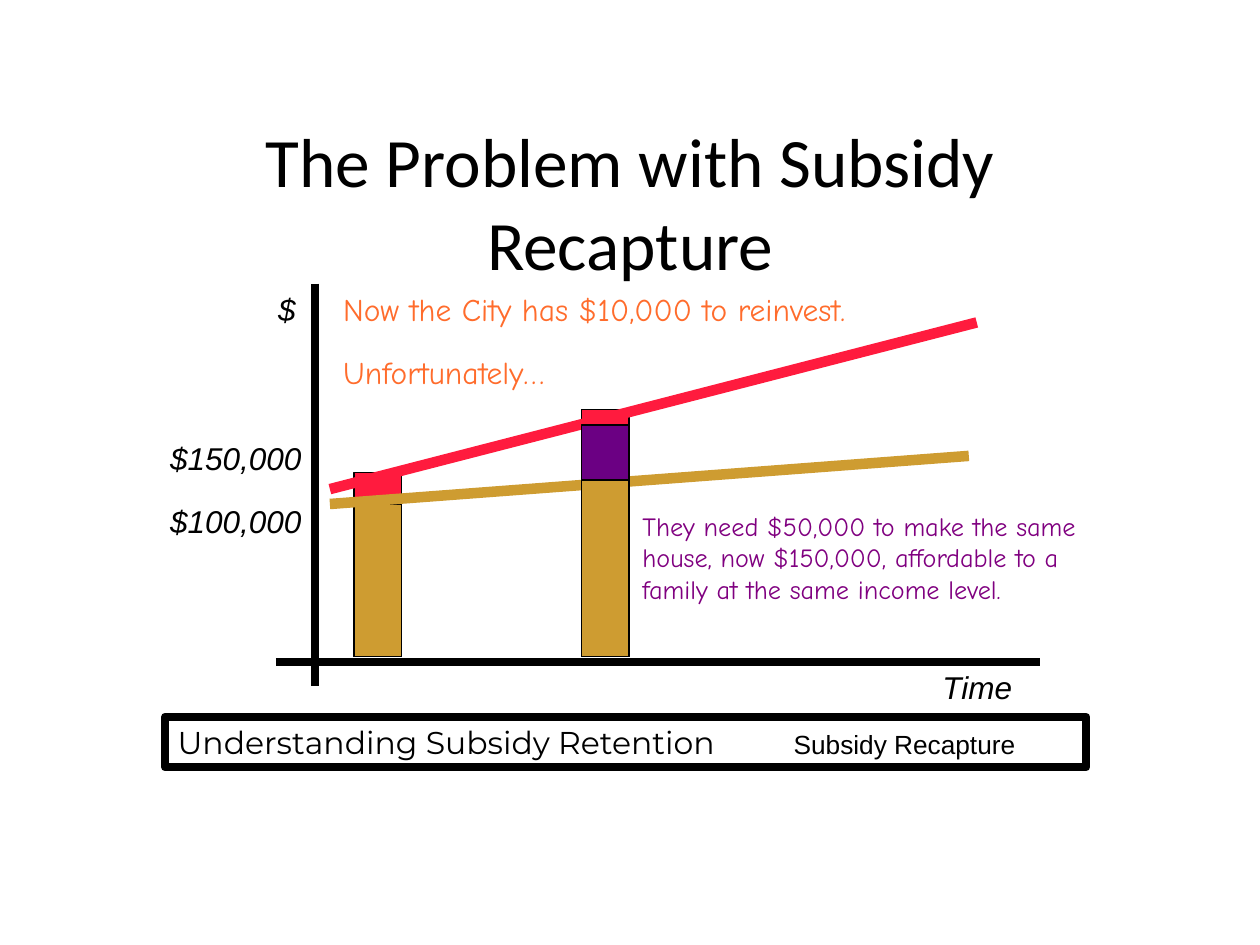
from dataclasses import dataclass

from lxml.etree import SubElement
from pptx import Presentation
from pptx.dml.color import RGBColor
from pptx.enum.shapes import MSO_CONNECTOR as Connector, MSO_SHAPE as ShapeKind
from pptx.enum.text import MSO_ANCHOR as Anchor, MSO_AUTO_SIZE as AutoSize, PP_ALIGN as Align
from pptx.oxml.ns import qn
from pptx.util import Cm, Pt

COLORS = {
    "ink": "000000",
    "market": "FF1B3E",
    "affordable": "CE9C31",
    "gap": "6B0083",
    "city": "FF6C2C",
    "need": "800080",
}
TITLE_LAYOUT = 5
BAR_WIDTH = 0.95
BAR_BASE = 13.24


@dataclass(frozen=True)
class Line:
    start: tuple[float, float]
    end: tuple[float, float]
    color: str
    weight: float


@dataclass(frozen=True)
class Segment:
    left: float
    top: float
    bottom: float
    color: str


@dataclass(frozen=True)
class Label:
    text: str
    left: float
    top: float
    width: float
    height: float = 1.02
    font: str = "Arial"
    size: float = 18
    color: str = "ink"
    italic: bool = False
    wrap: bool = False


AXES = [
    Line((6.35, 5.72), (6.35, 13.82), "ink", 4.5),
    Line((5.56, 13.34), (20.96, 13.34), "ink", 4.5),
]
TRENDS = [
    Line((6.65, 10.16), (19.53, 9.19), "affordable", 6),
    Line((6.65, 9.86), (19.69, 6.5), "market", 6),
]
BACK_SEGMENTS = [
    Segment(7.14, 9.53, BAR_BASE, "market"),
    Segment(7.14, 10.16, BAR_BASE, "affordable"),
    Segment(11.73, 8.26, BAR_BASE, "market"),
]
FRONT_SEGMENTS = [
    Segment(11.73, 9.68, BAR_BASE, "affordable"),
    Segment(11.73, 8.57, 9.68, "gap"),
]
LABELS = [
    Label("$", 5.38, 5.72, 0.48, italic=True),
    Label("$150,000", 3.18, 8.73, 3.18, italic=True),
    Label("$100,000", 3.18, 10, 3.18, italic=True),
    Label("Time", 18.75, 13.34, 2.69, italic=True),
    Label("Now the City has $10,000 to reinvest.", 6.67, 5.72, 11.91,
          font="Comic Neue", color="city"),
    Label("Unfortunately…", 6.67, 6.99, 5.18, font="Comic Neue", color="city"),
    Label("They need $50,000 to make the same house, now $150,000, "
          "affordable to a family at the same income level.",
          12.7, 10.16, 10.01, 2.18, "Comic Neue", 15, "need", wrap=True),
]


def rgb(color: str) -> RGBColor:
    return RGBColor.from_string(COLORS[color])


def add_run(paragraph, text: str, font: str, size: float,
            color: str = "ink", italic: bool = False) -> None:
    run = paragraph.add_run()
    run.text = text
    run.font.name = font
    run.font.size = Pt(size)
    run.font.italic = italic
    run.font.color.rgb = rgb(color)


def draw_line(slide, line: Line) -> None:
    points = [Cm(value) for value in (*line.start, *line.end)]
    connector = slide.shapes.add_connector(Connector.STRAIGHT, *points)
    connector.line.color.rgb = rgb(line.color)
    connector.line.width = Pt(line.weight)
    SubElement(connector._element.spPr, qn("a:effectLst"))


def draw_rectangle(slide, left: float, top: float, width: float, height: float,
                   weight: float):
    shape = slide.shapes.add_shape(
        ShapeKind.RECTANGLE, Cm(left), Cm(top), Cm(width), Cm(height))
    shape.shadow.inherit = False
    shape.line.color.rgb = rgb("ink")
    shape.line.width = Pt(weight)
    return shape


def draw_segment(slide, segment: Segment) -> None:
    shape = draw_rectangle(slide, segment.left, segment.top, BAR_WIDTH,
                           segment.bottom - segment.top, 0.75)
    shape.fill.solid()
    shape.fill.fore_color.rgb = rgb(segment.color)


def draw_label(slide, label: Label) -> None:
    box = slide.shapes.add_textbox(
        Cm(label.left), Cm(label.top), Cm(label.width), Cm(label.height))
    frame = box.text_frame
    frame.word_wrap = label.wrap
    add_run(frame.paragraphs[0], label.text, label.font, label.size,
            label.color, label.italic)


def draw_title(slide) -> None:
    title = slide.shapes.title
    title.left, title.top, title.width, title.height = (
        Cm(4.13), Cm(2.86), Cm(17.15), Cm(2.38))
    frame = title.text_frame
    frame.auto_size = AutoSize.NONE
    frame.vertical_anchor = Anchor.MIDDLE
    paragraph = frame.paragraphs[0]
    paragraph.alignment = Align.CENTER
    add_run(paragraph, "The Problem with Subsidy Recapture", "Calibri", 39.6)


def draw_footer(slide) -> None:
    footer = draw_rectangle(slide, 3.33, 14.45, 18.57, 1.02, 4.5)
    footer.fill.background()
    frame = footer.text_frame
    frame.word_wrap = True
    frame.vertical_anchor = Anchor.TOP
    paragraph = frame.paragraphs[0]
    paragraph.alignment = Align.LEFT
    # A tab stop sets the section name apart
    tabs = SubElement(paragraph._p.get_or_add_pPr(), qn("a:tabLst"))
    SubElement(tabs, qn("a:tab"), pos=str(Cm(12.42)), algn="l")
    add_run(paragraph, "Understanding Subsidy Retention\t", "Montserrat", 18)
    add_run(paragraph, "Subsidy Recapture", "Arial", 15)


def main() -> None:
    presentation = Presentation()
    presentation.slide_width, presentation.slide_height = Cm(25.4), Cm(19.05)
    slide = presentation.slides.add_slide(presentation.slide_layouts[TITLE_LAYOUT])
    draw_title(slide)

    # Axes and bars, with the trend lines between the bar layers
    for axis in AXES:
        draw_line(slide, axis)
    for segment in BACK_SEGMENTS:
        draw_segment(slide, segment)
    for trend in TRENDS:
        draw_line(slide, trend)
    for segment in FRONT_SEGMENTS:
        draw_segment(slide, segment)

    # Wording and footer
    for label in LABELS:
        draw_label(slide, label)
    draw_footer(slide)
    presentation.save("out.pptx")


if __name__ == "__main__":
    main()
